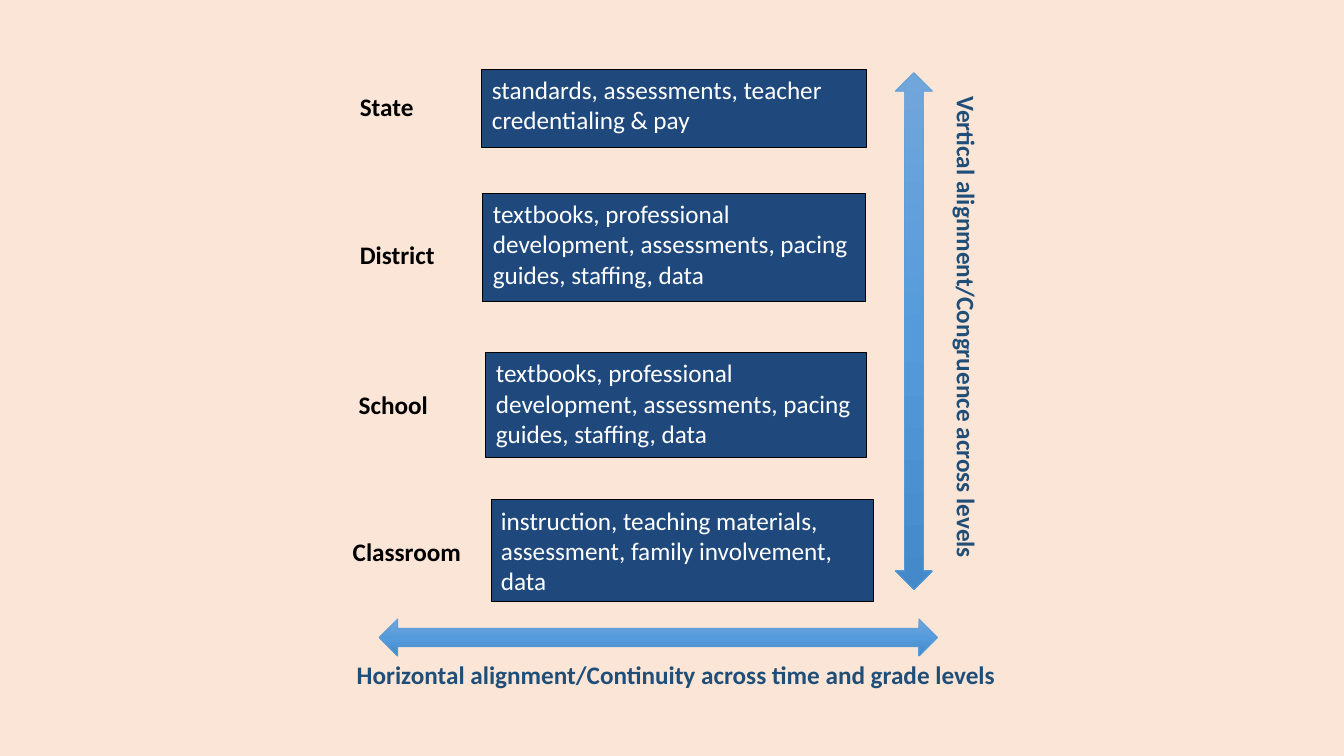
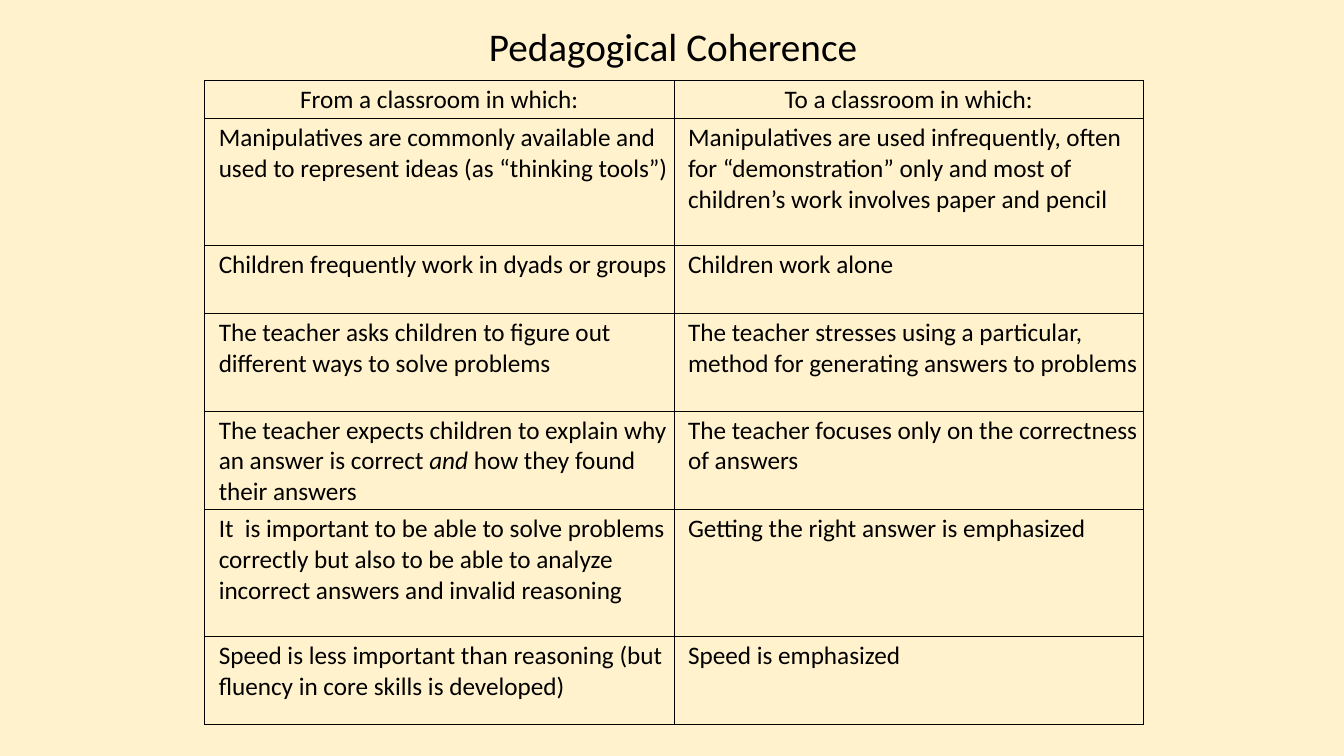
from lxml.etree import SubElement as Sub
from pptx import Presentation
from pptx.dml.color import RGBColor as Rgb
from pptx.enum.shapes import MSO_SHAPE as Kind
from pptx.enum.text import PP_ALIGN as Align
from pptx.oxml.ns import qn
from pptx.util import Inches, Pt

CELL = Inches(0.1)
FONT = "Calibri"
HUE = {
    "peach": "FBE5D6", "cream": "FFF2CC", "ink": "000000", "white": "FFFFFF",
    "navy": "1F497D", "blue": "1F4E79", "edge": "5B9BD5",
    "top": "71A6DB", "mid": "559BDB", "low": "448ACA",
}
LEVELS = [
    ((17.8, 0.9, 38.1, 7.7), (13.1, 1.7), "State",
     "standards, assessments, teacher credentialing & pay"),
    ((17.9, 13.2, 37.9, 10.7), (13.2, 4), "District",
     "textbooks, professional development, assessments, pacing guides, staffing, data"),
    ((18.2, 29, 37.7, 10.4), (13.6, 3.1), "School",
     "textbooks, professional development, assessments, pacing guides, staffing, data"),
    ((18.7, 43.6, 37.9, 10.1), (14.7, 3.1), "Classroom",
     "instruction, teaching materials, assessment, family involvement, data"),
]
HEAD = ["From a classroom in which:", "To a classroom in which:"]
ROWS = [
    (12.6, "Manipulatives are commonly available and used to represent ideas (as “thinking tools”)",
     "Manipulatives are used infrequently, often for “demonstration” only and most of "
     "children’s work involves paper and pencil"),
    (6.7, "Children frequently work in dyads or groups", "Children work alone"),
    (9.7, "The teacher asks children to figure out different ways to solve problems",
     "The teacher stresses using a particular, method for generating answers to problems"),
    (9.7, "The teacher expects children to explain why an answer is correct |and |how they found their answers",
     "The teacher focuses only on the correctness of answers"),
    (12.6, "It  is important to be able to solve problems correctly but also to be able to "
     "analyze incorrect answers and invalid reasoning",
     "Getting the right answer is emphasized"),
    (8.7, "Speed is less important than reasoning (but fluency in core skills is developed)",
     "Speed is emphasized"),
]


def color(name):
    """Return the named colour."""
    return Rgb.from_string(HUE[name])


def units(*cells):
    """Turn grid cells into lengths."""
    return [round(n * CELL) for n in cells]


def within(box, x, y, w, h):
    """Shift a part by the corner of its box."""
    return box[0] + x, box[1] + y, w, h


def write(frame, text, hue="ink", size=18, bold=False, align=Align.LEFT):
    """Write one paragraph, with every second part between bars in italics."""
    frame.word_wrap = True
    para = frame.paragraphs[0]
    para.alignment = align
    for i, part in enumerate(text.split("|")):
        run = para.add_run()
        run.text = part
        font = run.font
        font.name, font.size, font.bold = FONT, Pt(size), bold
        font.italic = i % 2 == 1
        font.color.rgb = color(hue)
    return para


def label(slide, box, text, **style):
    """Add a text box and return its frame."""
    frame = slide.shapes.add_textbox(*units(*box)).text_frame
    write(frame, text, **style)
    return frame


def shape(slide, box, kind, line, width):
    """Add a flat outlined shape."""
    item = slide.shapes.add_shape(kind, *units(*box))
    item.shadow.inherit = False
    item.line.color.rgb = color(line)
    item.line.width = Pt(width)
    return item


def arrow(slide, box, kind):
    """Add a double arrow with a three-step gradient."""
    item = shape(slide, box, kind, "edge", 0.5)
    item.fill.gradient()
    item.fill.gradient_angle = 270
    stops = item._element.spPr.find(".//" + qn("a:gsLst"))
    for old in list(stops):
        stops.remove(old)
    for i, name in enumerate(("top", "mid", "low")):
        stop = Sub(stops, qn("a:gs"), pos=str(i * 50000))
        Sub(stop, qn("a:srgbClr"), val=HUE[name])


def level(slide, box, shift, name, text):
    """Add one level: a filled box and the name to its left."""
    left, down = shift
    label(slide, within(box, -left, down, 13, 4.5), name, bold=True)
    item = shape(slide, box, Kind.RECTANGLE, "ink", 0.75)
    item.fill.solid()
    item.fill.fore_color.rgb = color("navy")
    frame = item.text_frame
    frame.vertical_anchor = 1
    write(frame, text, "white")


def chart(slide, box):
    """Place the levels and both alignment arrows."""
    for part, shift, name, text in LEVELS:
        level(slide, within(box, *part), shift, name, text)
    style = {"hue": "blue", "bold": True}
    label(slide, within(box, -2.6, 58.9, 79.3, 8.2),
          "Horizontal alignment/Continuity across time and grade levels",
          align=Align.CENTER, **style)
    side = label(slide, within(box, 63.1, 2.6, 4.8, 47.8),
                 "Vertical alignment/Congruence across levels", **style)
    side._txBody.bodyPr.set("vert", "eaVert")
    arrow(slide, within(box, 7.6, 55.4, 55.4, 3.7), Kind.LEFT_RIGHT_ARROW)
    arrow(slide, within(box, 58.8, 1.2, 3.7, 51.3), Kind.UP_DOWN_ARROW)


def border(cell):
    """Draw thin lines around a table cell."""
    props = cell._tc.get_or_add_tcPr()
    for i, side in enumerate(("lnL", "lnR", "lnT", "lnB")):
        line = Sub(props, qn("a:" + side), w=str(Pt(0.75)))
        fill = Sub(line, qn("a:solidFill"))
        Sub(fill, qn("a:srgbClr"), val=HUE["ink"])
        props.insert(i, line)


def fit(cell, text, head):
    """Fill one table cell, centred in the head row and indented below."""
    cell.fill.background()
    border(cell)
    inset = Inches(0.04)
    cell.margin_left = cell.margin_right = inset
    cell.margin_top = cell.margin_bottom = inset
    para = write(cell.text_frame, text, align=Align.CENTER if head else Align.LEFT)
    if head:
        para.space_before = para.space_after = Pt(6)
    else:
        props = para._p.get_or_add_pPr()
        props.set("marL", str(Inches(0.1)))
        props.set("indent", "0")


def grid(slide, box):
    """Place the two-column comparison table."""
    rows = [(3.8, *HEAD), *ROWS]
    table = slide.shapes.add_table(len(rows), 2, *units(*box)).table
    table.first_row = table.horz_banding = False
    for col in table.columns:
        col.width = units(box[2] / 2)[0]
    for i, (high, *texts) in enumerate(rows):
        table.rows[i].height = units(high)[0]
        for j, text in enumerate(texts):
            fit(table.cell(i, j), text, i == 0)


def page(deck, hue):
    """Add a blank slide with a plain background."""
    slide = deck.slides.add_slide(deck.slide_layouts[6])
    fill = slide.background.fill
    fill.solid()
    fill.fore_color.rgb = color(hue)
    return slide


def main():
    """Build and save both slides."""
    deck = Presentation()
    deck.slide_width, deck.slide_height = Inches(13.33), Inches(7.5)
    chart(page(deck, "peach"), (30, 6, 77, 67))
    slide = page(deck, "cream")
    grid(slide, (20.3, 8, 93.1, 64.3))
    label(slide, (47.3, 1.7, 38.9, 5.7), "Pedagogical Coherence",
          size=28, align=Align.CENTER)
    deck.save("out.pptx")


if __name__ == "__main__":
    main()
